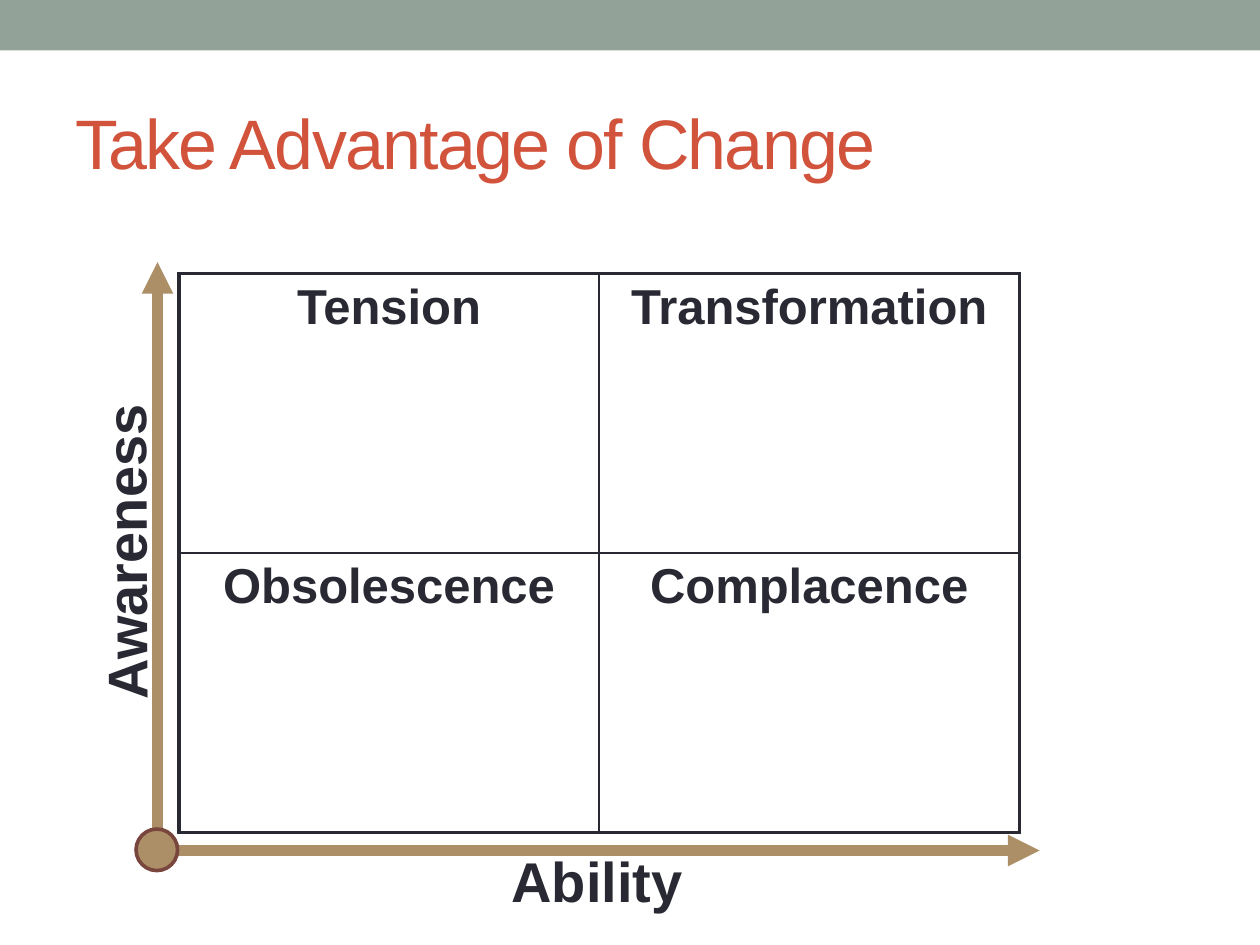
from lxml import etree
from pptx import Presentation
from pptx.dml.color import RGBColor
from pptx.enum import shapes, text
from pptx.oxml.ns import qn
from pptx.util import Inches, Pt

SAGE = RGBColor(0x93, 0xA2, 0x99)
RED = RGBColor(0xD2, 0x53, 0x3C)
INK = RGBColor(0x29, 0x29, 0x34)
TAN = RGBColor(0xAD, 0x8F, 0x67)
BROWN = RGBColor(0x79, 0x46, 0x3D)
THICK, THIN = 2.25, 1
GRID = [["Tension", "Transformation"], ["Obsolescence", "Complacence"]]


def style(para, size, color=INK, bold=True):
    font = para.font
    font.name, font.size, font.bold = "Arial", Pt(size), bold
    font.color.rgb = color


def add_text(slide, words, box, size, color=INK, bold=True, wrap=True):
    shape = slide.shapes.add_textbox(*map(Inches, box))
    frame = shape.text_frame
    frame.word_wrap = wrap
    para = frame.paragraphs[0]
    para.text = words
    style(para, size, color, bold)
    return shape


def add_solid(slide, kind, box, fill, edge=None):
    shape = slide.shapes.add_shape(kind, *map(Inches, box))
    shape.shadow.inherit = False
    shape.fill.solid()
    shape.fill.fore_color.rgb = fill
    if edge:
        shape.line.color.rgb = edge
        shape.line.width = Pt(2.08)
    else:
        shape.line.fill.background()


def add_axis(slide, *ends):
    axis = slide.shapes.add_connector(
        shapes.MSO_CONNECTOR.STRAIGHT, *map(Inches, ends))
    axis.line.color.rgb = TAN
    axis.line.width = Pt(6)
    etree.SubElement(axis.line._get_or_add_ln(), qn("a:tailEnd"), type="triangle")
    etree.SubElement(axis._element.spPr, qn("a:effectLst"))


def set_edges(cell, widths):
    """Draw cell borders; widths run left, right, top, bottom."""
    props = cell._tc.get_or_add_tcPr()
    for spot, (side, width) in enumerate(zip("LRTB", widths)):
        line = etree.Element(qn("a:ln" + side), w=str(Pt(width)))
        fill = etree.SubElement(line, qn("a:solidFill"))
        etree.SubElement(fill, qn("a:srgbClr"), val=str(INK))
        props.insert(spot, line)


def add_grid(slide):
    frame = slide.shapes.add_table(
        2, 2, *map(Inches, (1.42, 2.17, 6.67, 4.44)))
    table = frame.table
    table.first_row = table.horz_banding = False
    for row, names in enumerate(GRID):
        for col, name in enumerate(names):
            cell = table.cell(row, col)
            cell.fill.background()
            outer = (col == 0, col == 1, row == 0, row == 1)
            set_edges(cell, [THICK if out else THIN for out in outer])
            para = cell.text_frame.paragraphs[0]
            para.text = name
            para.alignment = text.PP_ALIGN.CENTER
            style(para, 28)


def main():
    deck = Presentation()
    deck.slide_width, deck.slide_height = Inches(10), Inches(7.5)
    slide = deck.slides.add_slide(deck.slide_layouts[6])

    add_solid(slide, shapes.MSO_SHAPE.RECTANGLE, (0, 0, 10, 0.4), SAGE)
    title = add_text(slide, "Take Advantage of Change",
                     (0.5, 0.58, 9, 1.08), 40, RED, False)
    title.text_frame.vertical_anchor = text.MSO_ANCHOR.MIDDLE
    run = title.text_frame.paragraphs[0].runs[0]
    run._r.get_or_add_rPr().set("spc", "-100")

    add_grid(slide)
    add_axis(slide, 1.25, 6.67, 1.25, 2.08)
    rise = add_text(slide, "Awareness", (-0.29, 4.05, 2.56, 0.64), 32, wrap=False)
    rise.rotation = 269.6
    base = add_text(slide, "Ability", (3.67, 6.67, 2.14, 0.63), 32)
    base.text_frame.paragraphs[0].alignment = text.PP_ALIGN.CENTER
    add_axis(slide, 1.25, 6.75, 8.25, 6.75)
    add_solid(slide, shapes.MSO_SHAPE.OVAL, (1.08, 6.58, 0.33, 0.33), TAN, BROWN)
    deck.save("out.pptx")


if __name__ == "__main__":
    main()
